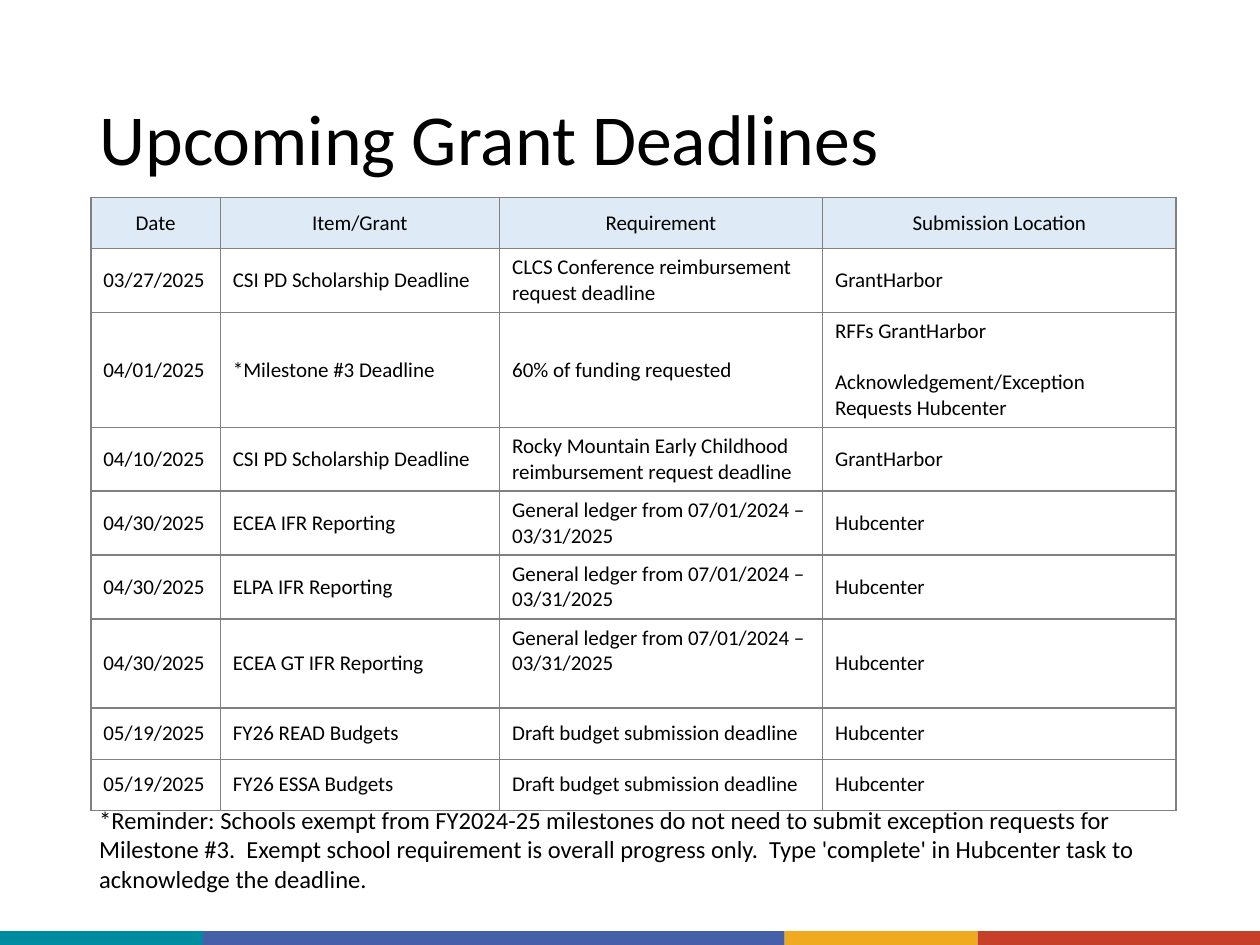
from lxml import etree
from pptx import Presentation
from pptx import util as u
from pptx.dml.color import RGBColor
from pptx.enum import shapes, text
from pptx.oxml import ns

LEFT, CENTER = text.PP_ALIGN.LEFT, text.PP_ALIGN.CENTER
LINE_GAP = 14.6


def color(value):
    return RGBColor.from_string(value)


def apply(target, values):
    for name, value in values.items():
        setattr(target, name, value)


class DeckSlide:
    face = "Calibri"
    ink = "000000"
    header_fill = "DEEBF7"
    border = "808080"

    def __init__(self, slide):
        self.slide = slide

    def style(self, paragraph, size, align=LEFT):
        paragraph.alignment = align
        apply(paragraph.font, {"name": self.face, "size": u.Pt(size), "bold": False})
        paragraph.font.color.rgb = color(self.ink)

    def title(self, words, left, top, width, height):
        heading = self.slide.shapes.title
        apply(heading, {"left": u.Cm(left), "top": u.Cm(top),
                        "width": u.Cm(width), "height": u.Cm(height)})
        frame = heading.text_frame
        frame.text = words
        apply(frame, {"vertical_anchor": text.MSO_ANCHOR.MIDDLE, "word_wrap": True,
                      "auto_size": text.MSO_AUTO_SIZE.NONE})
        frame.paragraphs[0].line_spacing = 0.9
        self.style(frame.paragraphs[0], 41)

    def bar(self, left, top, width, height, fill):
        stripe = self.slide.shapes.add_shape(
            shapes.MSO_SHAPE.RECTANGLE, u.Cm(left), u.Cm(top), u.Cm(width), u.Cm(height))
        stripe.shadow.inherit = False
        stripe.fill.solid()
        stripe.fill.fore_color.rgb = color(fill)
        stripe.line.fill.background()

    def note(self, words, left, top, width, height):
        reminder = self.slide.shapes.add_textbox(
            u.Cm(left), u.Cm(top), u.Cm(width), u.Cm(height))
        frame = reminder.text_frame
        apply(frame, {"word_wrap": True, "auto_size": text.MSO_AUTO_SIZE.SHAPE_TO_FIT_TEXT})
        frame.text = words
        self.style(frame.paragraphs[0], 14)

    def outline(self, cell):
        properties = cell._tc.get_or_add_tcPr()
        for side in ("a:lnL", "a:lnR", "a:lnT", "a:lnB"):
            edge = etree.SubElement(properties, ns.qn(side), w=str(u.Pt(1)))
            solid = etree.SubElement(edge, ns.qn("a:solidFill"))
            etree.SubElement(solid, ns.qn("a:srgbClr"), val=self.border)

    def fill_cell(self, cell, words, is_header):
        self.outline(cell)
        if is_header:
            cell.fill.solid()
            cell.fill.fore_color.rgb = color(self.header_fill)
        else:
            cell.fill.background()
        cell.vertical_anchor = text.MSO_ANCHOR.MIDDLE
        cell.text = words
        for index, paragraph in enumerate(cell.text_frame.paragraphs):
            if index:
                paragraph.space_before = u.Pt(LINE_GAP)
            self.style(paragraph, 12, CENTER if is_header else LEFT)

    def table(self, rows, left, top, widths, row_height):
        grid = self.slide.shapes.add_table(
            len(rows), len(widths), u.Cm(left), u.Cm(top),
            u.Cm(sum(widths)), u.Cm(row_height * len(rows))).table
        grid.horz_banding = False
        for column, width in zip(grid.columns, widths):
            column.width = u.Cm(width)
        for row_index, (row, entries) in enumerate(zip(grid.rows, rows)):
            row.height = u.Cm(row_height)
            for cell, words in zip(row.cells, entries):
                self.fill_cell(cell, words, row_index == 0)
        return grid


LEDGER = "General ledger from 07/01/2024 – 03/31/2025"
DRAFT = "Draft budget submission deadline"
SCHOLARSHIP = "CSI PD Scholarship Deadline"
GRANT_PORTAL = "GrantHarbor"
TASK_PORTAL = "Hubcenter"

DEADLINES = [
    ("Date", "Item/Grant", "Requirement", "Submission Location"),
    ("03/27/2025", SCHOLARSHIP, "CLCS Conference reimbursement request deadline", GRANT_PORTAL),
    ("04/01/2025", "*Milestone #3 Deadline", "60% of funding requested",
     f"RFFs {GRANT_PORTAL}\nAcknowledgement/Exception Requests {TASK_PORTAL}"),
    ("04/10/2025", SCHOLARSHIP,
     "Rocky Mountain Early Childhood reimbursement request deadline", GRANT_PORTAL),
    ("04/30/2025", "ECEA IFR Reporting", LEDGER, TASK_PORTAL),
    ("04/30/2025", "ELPA IFR Reporting", LEDGER, TASK_PORTAL),
    ("04/30/2025", "ECEA GT IFR Reporting", LEDGER, TASK_PORTAL),
    ("05/19/2025", "FY26 READ Budgets", DRAFT, TASK_PORTAL),
    ("05/19/2025", "FY26 ESSA Budgets", DRAFT, TASK_PORTAL),
]
GIFTED_ROW, REQUIREMENT = 6, 2

FOOTER_BARS = [(4.09, "008CA0"), (11.73, "455FA9"), (3.89, "EFAA1F"), (5.69, "C63F28")]


def main():
    deck = Presentation()
    apply(deck, {"slide_width": u.Cm(25.4), "slide_height": u.Cm(19.05)})
    page = DeckSlide(deck.slides.add_slide(deck.slide_layouts[5]))

    bar_left = 0
    for width, fill in FOOTER_BARS:
        page.bar(bar_left, 18.77, width, 0.28, fill)
        bar_left += width

    page.title("Upcoming Grant Deadlines", 1.75, 1.02, 21.9, 3.68)
    grid = page.table(DEADLINES, 1.83, 3.98, [2.61, 5.63, 6.51, 7.13], 1.03)
    grid.cell(GIFTED_ROW, REQUIREMENT).margin_bottom = u.Cm(0.64)
    page.note("*Reminder: Schools exempt from FY2024-25 milestones do not need to submit "
              "exception requests for Milestone #3.  Exempt school requirement is overall "
              f"progress only.  Type 'complete' in {TASK_PORTAL} task to acknowledge the deadline.",
              1.75, 16.1, 21.59, 2.06)
    deck.save("out.pptx")


if __name__ == "__main__":
    main()
